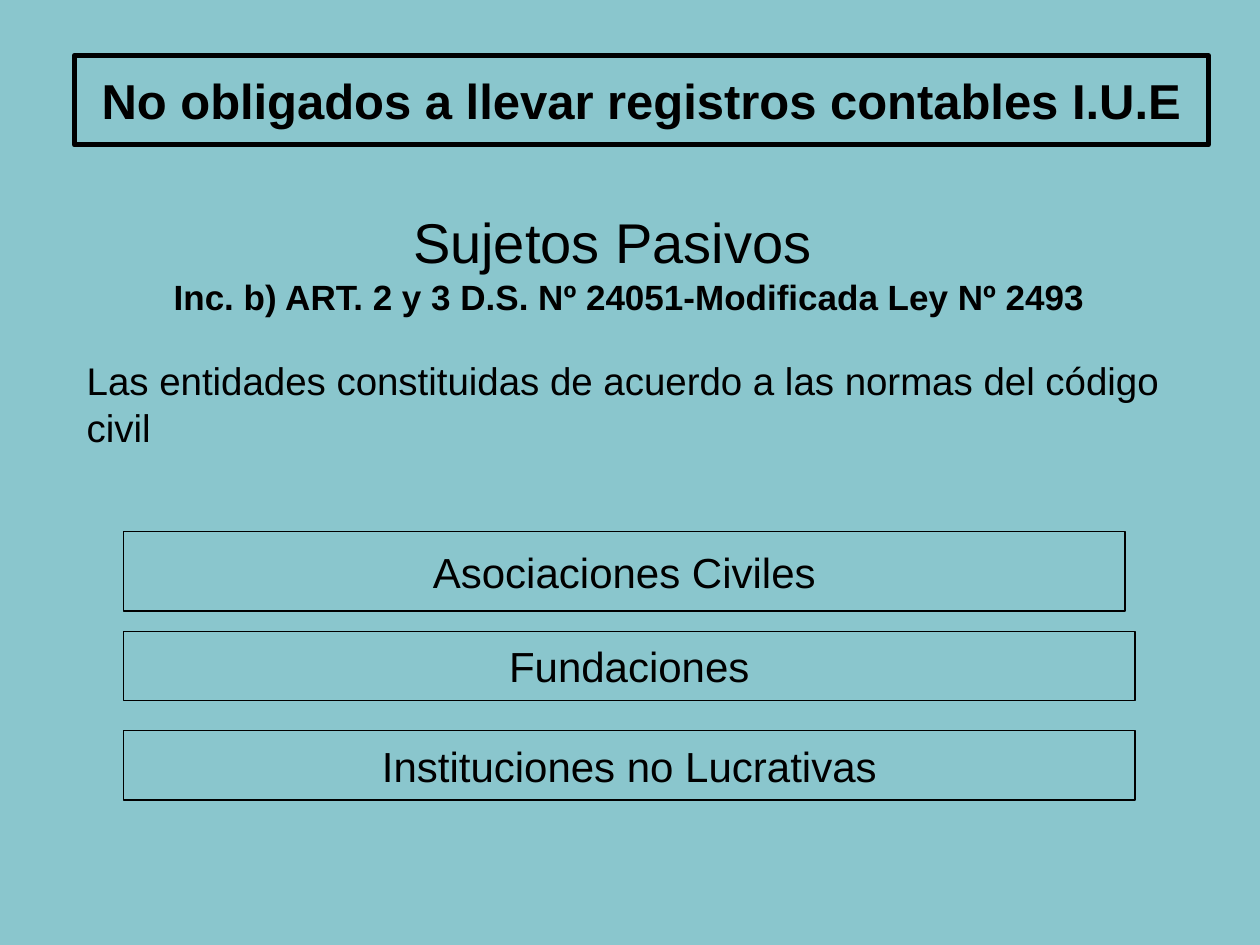
from pptx import Presentation
from pptx.dml.color import RGBColor
from pptx.enum.shapes import MSO_SHAPE
from pptx.enum.text import MSO_ANCHOR, MSO_AUTO_SIZE, PP_ALIGN
from pptx.util import Inches, Pt

BLACK = RGBColor(0x00, 0x00, 0x00)
AQUA = RGBColor(0x8A, 0xC6, 0xCD)
FONT = "Arial"

HEADING = "No obligados a llevar registros contables I.U.E"
INTRO = [
    # text, size, bold, indent in inches, space before in points
    ("Sujetos Pasivos", 32, False, 2.59, 0),
    ("Inc. b) ART. 2 y 3 D.S. Nº 24051-Modificada Ley Nº 2493", 20, True, 0.69, 0),
    ("Las entidades constituidas de acuerdo a las normas del código", 22, False, 0, 23),
    ("civil", 22, False, 0, 0),
]
ENTITIES = [
    ("Asociaciones Civiles", 7.95, 0.63),
    ("Fundaciones", 8.03, 0.55),
    ("Instituciones no Lucrativas", 8.03, 0.55),
]
ENTITY_LEFT = 0.98
ENTITY_BOTTOM = 4.85
ENTITY_PITCH = 0.79 
ENTITY_LAST_OFFSET = 0.08


def format_paragraph(paragraph, size, bold, align):
    paragraph.alignment = align
    for run in paragraph.runs:
        run.font.name = FONT
        run.font.size = Pt(size)
        run.font.bold = bold
        run.font.color.rgb = BLACK


def outline(box, width):
    box.fill.background()
    box.line.color.rgb = BLACK
    box.line.width = Pt(width)


def place(box, left, top, width, height):
    box.left, box.top = Inches(left), Inches(top)
    box.width, box.height = Inches(width), Inches(height)


def add_heading(slide):
    heading = slide.shapes.title
    place(heading, 0.59, 0.44, 9, 0.71)
    outline(heading, 3)
    frame = heading.text_frame
    frame.text = HEADING
    frame.auto_size = MSO_AUTO_SIZE.NONE
    frame.vertical_anchor = MSO_ANCHOR.MIDDLE
    format_paragraph(frame.paragraphs[0], 28, True, PP_ALIGN.CENTER)


def add_entities(slide):
    top = 4.22
    for name, width, height in ENTITIES:
        entity = slide.shapes.add_shape(
            MSO_SHAPE.RECTANGLE, Inches(ENTITY_LEFT), Inches(top),
            Inches(width), Inches(height))
        entity.shadow.inherit = False
        outline(entity, 0.75)
        frame = entity.text_frame
        frame.text = name
        frame.word_wrap = False
        frame.vertical_anchor = MSO_ANCHOR.MIDDLE
        format_paragraph(frame.paragraphs[0], 24, False, PP_ALIGN.CENTER)
        top += ENTITY_PITCH


def add_intro(slide):
    intro = slide.shapes.add_textbox(
        Inches(0.59), Inches(1.47), Inches(8.9), Inches(2.28))
    frame = intro.text_frame
    frame.word_wrap = True
    frame.vertical_anchor = MSO_ANCHOR.MIDDLE
    frame.text = "\n".join(line[0] for line in INTRO)
    for paragraph, (_, size, bold, indent, before) in zip(frame.paragraphs, INTRO):
        format_paragraph(paragraph, size, bold, PP_ALIGN.LEFT)
        paragraph.space_before = Pt(before)
        properties = paragraph._p.get_or_add_pPr()
        properties.set("marL", str(Inches(indent)))
        properties.set("indent", "0")


def main():
    deck = Presentation()
    deck.slide_width, deck.slide_height = Inches(10), Inches(7.5)
    slide = deck.slides.add_slide(deck.slide_layouts[5])
    slide.background.fill.solid()
    slide.background.fill.fore_color.rgb = AQUA
    add_heading(slide)
    add_entities(slide)
    add_intro(slide)
    deck.save("out.pptx")


if __name__ == "__main__":
    main()
